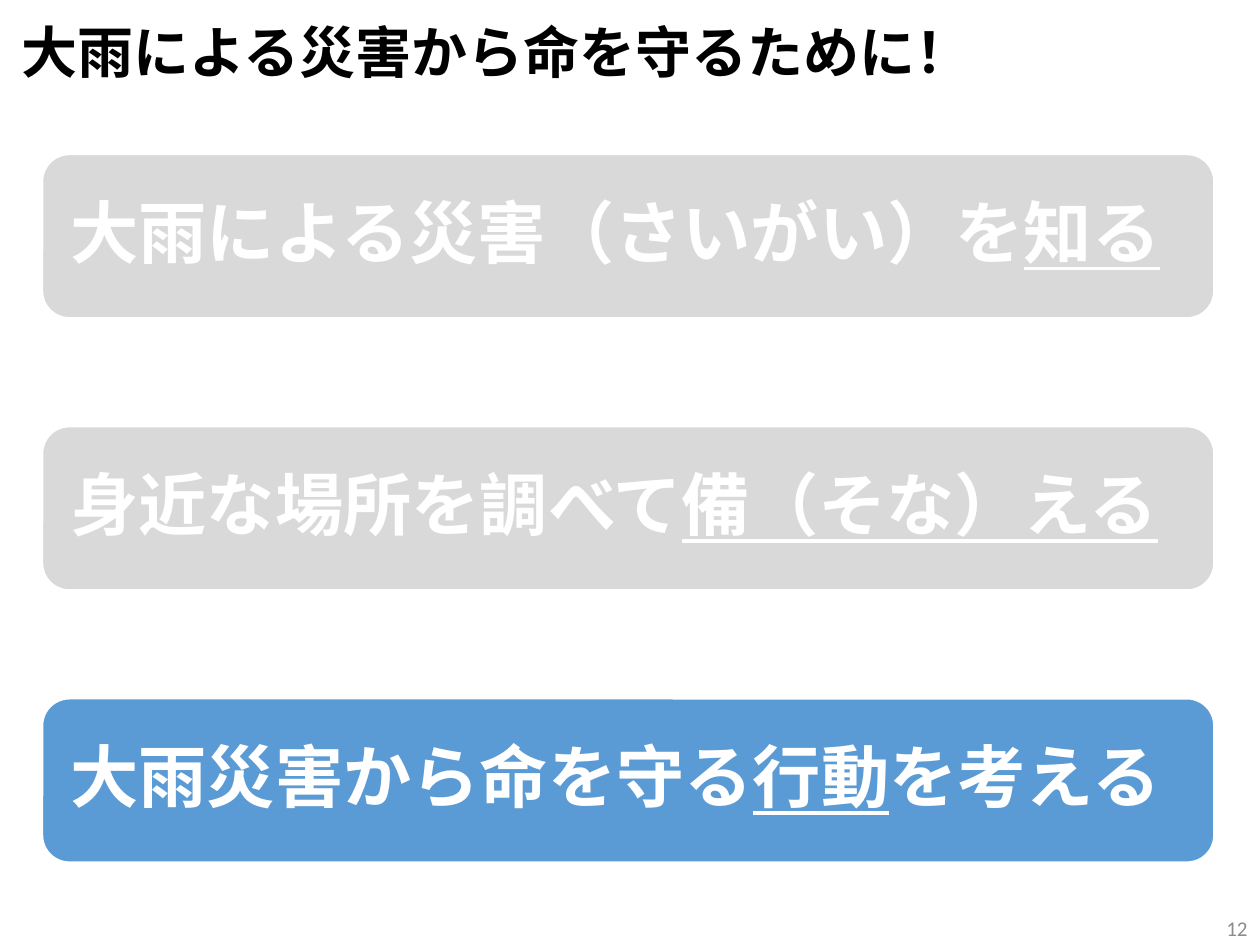
from lxml.etree import SubElement
from pptx import Presentation
from pptx.dml.color import RGBColor
from pptx.enum.shapes import MSO_SHAPE as Shape
from pptx.enum.text import MSO_ANCHOR as Anchor, PP_ALIGN as Align
from pptx.oxml.ns import qn
from pptx.util import Pt

BLACK = RGBColor(0x00, 0x00, 0x00)
WHITE = RGBColor(0xFF, 0xFF, 0xFF)
MUTED = RGBColor(0xD9, 0xD9, 0xD9)
ACTIVE = RGBColor(0x5B, 0x9B, 0xD5)
NUMBER_GRAY = RGBColor(0x8C, 0x8C, 0x8C)
JAPANESE_FONT = "Noto Sans CJK JP"

# Each step: fill colour, then its text pieces with their underline flag
STEPS = [
    (MUTED, [("大雨による災害（さいがい）を", False), ("知る", True)]),
    (MUTED, [("身近な場所を調べて", False), ("備（そな）える", True)]),
    (ACTIVE, [("大雨災害から命を守る", False), ("行動", True), ("を考える", False)]),
]


def style_paragraph(paragraph, font_name, size, color, bold=False):
    """Set the font for Latin and East Asian text alike."""
    font = paragraph.font
    font.name, font.size, font.bold = font_name, Pt(size), bold
    font.color.rgb = color
    properties = paragraph._p.pPr.find(qn("a:defRPr"))
    SubElement(properties, qn("a:ea")).set("typeface", font_name)


def add_label(slide, box, text, align, *font):
    frame = slide.shapes.add_textbox(*map(Pt, box)).text_frame
    frame.word_wrap = True
    frame.vertical_anchor = Anchor.MIDDLE
    paragraph = frame.paragraphs[0]
    paragraph.text = text
    paragraph.alignment = align
    style_paragraph(paragraph, *font)
    return paragraph


def add_title(slide, box, text):
    paragraph = add_label(slide, box, text, Align.LEFT, JAPANESE_FONT, 32, BLACK, True)
    paragraph.line_spacing = 0.9


def add_step(slide, box, fill, pieces):
    shape = slide.shapes.add_shape(Shape.ROUNDED_RECTANGLE, *map(Pt, box))
    shape.shadow.inherit = False
    shape.fill.solid()
    shape.fill.fore_color.rgb = fill
    shape.line.color.rgb = WHITE
    shape.line.width = Pt(1.5)

    frame = shape.text_frame
    frame.word_wrap = True
    frame.vertical_anchor = Anchor.MIDDLE
    frame.margin_left = frame.margin_right = Pt(11.7)
    frame.margin_top = frame.margin_bottom = Pt(11.7)
    paragraph = frame.paragraphs[0]
    paragraph.alignment = Align.LEFT
    paragraph.line_spacing = 0.9
    paragraph.space_after = Pt(13.65)
    style_paragraph(paragraph, JAPANESE_FONT, 39, WHITE, True)
    for text, underlined in pieces:
        run = paragraph.add_run()
        run.text = text
        if underlined:
            run.font.underline = True


def add_steps(slide, box, steps, step_height):
    """Spread the steps evenly from the top to the bottom of the box."""
    left, top, width, height = box
    pitch = (height - step_height) / (len(steps) - 1)
    for index, (fill, pieces) in enumerate(steps):
        step_box = (left, top + index * pitch, width, step_height)
        add_step(slide, step_box, fill, pieces)


def main():
    presentation = Presentation()
    presentation.slide_width, presentation.slide_height = Pt(720), Pt(540)
    slide = presentation.slides.add_slide(presentation.slide_layouts[6])
    add_steps(slide, (24, 88, 670, 405), STEPS, 94)
    add_label(slide, (689, 522, 31, 17), "12", Align.RIGHT, "Calibri", 12, NUMBER_GRAY)
    add_title(slide, (5, 9, 567, 45), "大雨による災害から命を守るために！")
    presentation.save("out.pptx")


if __name__ == "__main__":
    main()
